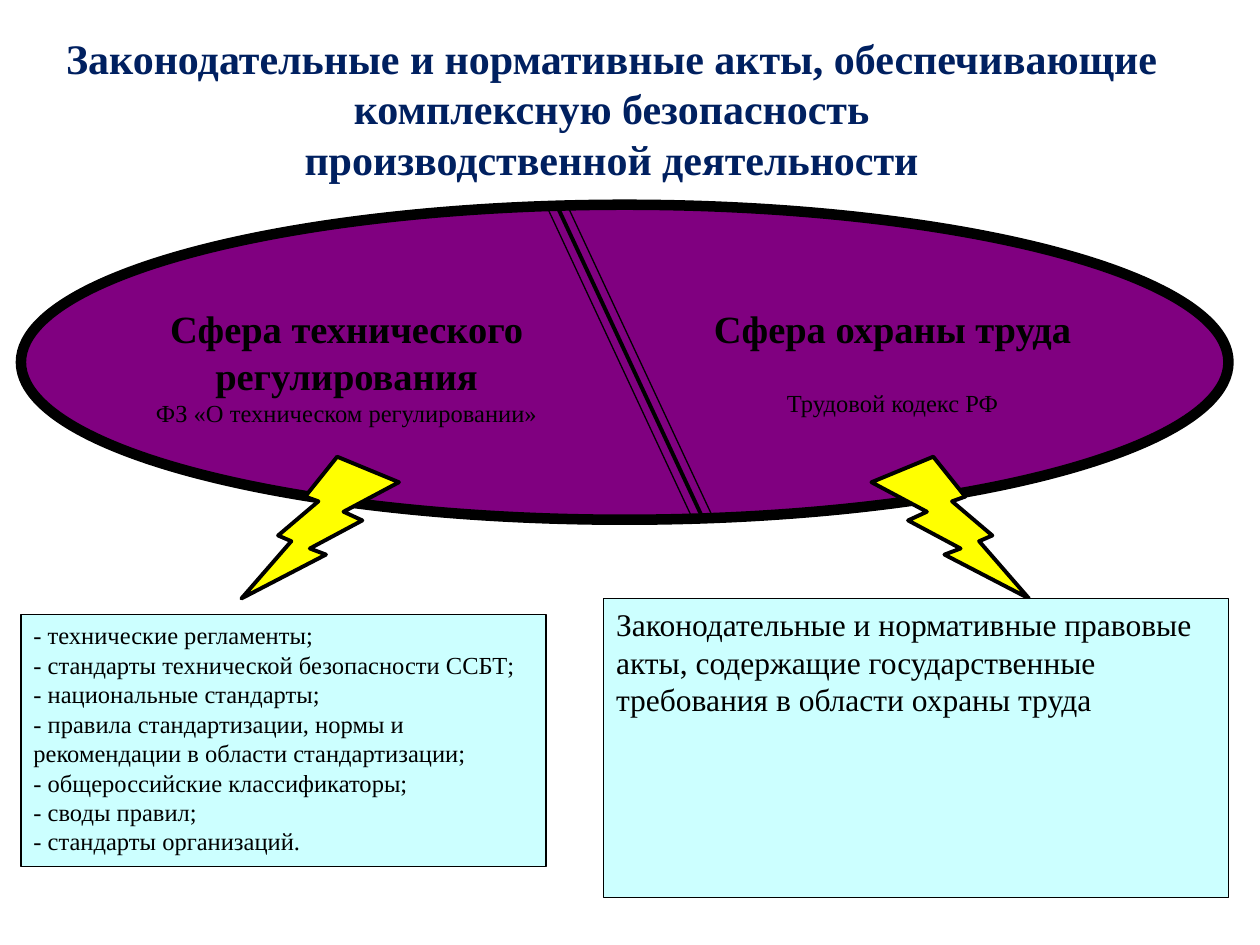
from lxml import etree
from pptx import Presentation
from pptx.dml.color import RGBColor
from pptx.enum.shapes import MSO_CONNECTOR, MSO_SHAPE
from pptx.enum.text import MSO_ANCHOR, MSO_AUTO_SIZE, PP_ALIGN
from pptx.oxml.ns import qn
from pptx.util import Pt

LEFT, CENTER = PP_ALIGN.LEFT, PP_ALIGN.CENTER
TOP, NO_FIT = MSO_ANCHOR.TOP, MSO_AUTO_SIZE.NONE
RECT, ELLIPSE, BOLT = MSO_SHAPE.RECTANGLE, MSO_SHAPE.OVAL, MSO_SHAPE.LIGHTNING_BOLT
STRAIGHT = MSO_CONNECTOR.STRAIGHT

FONT = "Times New Roman"
BLACK, NAVY, WHITE = "000000", "002060", "FFFFFF"
PURPLE, YELLOW, CYAN = "800080", "FFFF00", "CCFFFF"


def px(n):
    """120 px to the inch."""
    return n * 7620


def color(value):
    return RGBColor.from_string(value)


def add_text(tf, text, size=14, bold=False, fill=BLACK, align=LEFT, before=0):
    p = tf.paragraphs[0]
    if p.runs:
        p = tf.add_paragraph()
    p.alignment = align
    p.space_before = Pt(before)
    r = p.add_run()
    r.text = text
    r.font.name, r.font.size, r.font.bold = FONT, Pt(size), bold
    r.font.color.rgb = color(fill)


def setup_frame(tf):
    tf.word_wrap = True
    tf.auto_size = NO_FIT
    tf.vertical_anchor = TOP


def add_shape(s, kind, x, y, w, h, fill, line=0):
    sp = s.shapes.add_shape(kind, px(x), px(y), px(w), px(h))
    sp.shadow.inherit = False
    sp.fill.solid()
    sp.fill.fore_color.rgb = color(fill)
    if line:
        sp.line.color.rgb = color(BLACK)
        sp.line.width = Pt(line)
    else:
        sp.line.fill.background()
    setup_frame(sp.text_frame)
    return sp


def add_line(s, x1, y1, x2, y2, width):
    cxn = s.shapes.add_connector(STRAIGHT, px(x1), px(y1), px(x2), px(y2))
    cxn.line.color.rgb = color(BLACK)
    cxn.line.width = Pt(width)
    etree.SubElement(cxn._element.spPr, qn("a:effectLst"))


def add_title(s, x, y, w, h):
    sp = s.shapes.title
    sp.left, sp.top, sp.width, sp.height = px(x), px(y), px(w), px(h)
    sp.fill.solid()
    sp.fill.fore_color.rgb = color(WHITE)
    setup_frame(sp.text_frame)
    for text in ("Законодательные и нормативные акты, обеспечивающие комплексную безопасность",
                 "производственной деятельности"):
        add_text(sp.text_frame, text, size=24, bold=True, fill=NAVY, align=CENTER)


def add_spheres(s, x, y, w, h):
    """Ellipse with two headed halves and a slanted triple divider."""
    add_shape(s, ELLIPSE, x, y, w, h, PURPLE, line=6)
    halves = [
        (110, "Сфера технического регулирования", "ФЗ «О техническом регулировании»", 0),
        (630, "Сфера охраны труда", "Трудовой кодекс РФ", 21),
    ]
    for dx, heading, law, gap in halves:
        tf = add_shape(s, RECT, x + dx, y + 90, 400, 120, PURPLE).text_frame
        add_text(tf, heading, size=22, bold=True, align=CENTER)
        add_text(tf, law, align=CENTER, before=gap)
    for dx, width in ((500, 0.75), (510, 2.25), (520, 0.75)):
        add_line(s, x + dx, y, x + dx + 140, y + h, width)


def add_bolt(s, x, y, w, h, flip=False):
    sp = add_shape(s, BOLT, x, y, w, h, YELLOW, line=2.25)
    if flip:
        sp._element.spPr.xfrm.set("flipH", "1")


def add_box(s, x, y, w, h, lines, size):
    tf = add_shape(s, RECT, x, y, w, h, CYAN, line=0.75).text_frame
    for text in lines:
        add_text(tf, text, size=size)


def main():
    prs = Presentation()
    prs.slide_width, prs.slide_height = px(1200), px(900)
    s = prs.slides.add_slide(prs.slide_layouts[5])

    add_title(s, 15, 25, 1135, 148)
    add_spheres(s, 20, 195, 1150, 300)

    # Bolts from each half down to its box
    add_bolt(s, 230, 435, 150, 135, flip=True)
    add_bolt(s, 830, 435, 150, 135)

    # Documents of each sphere
    add_box(s, 20, 585, 500, 240, [
        "- технические регламенты;",
        "- стандарты технической безопасности ССБТ;",
        "- национальные стандарты;",
        "- правила стандартизации, нормы и рекомендации в области стандартизации;",
        "- общероссийские классификаторы;",
        "- своды правил;",
        "- стандарты организаций.",
    ], size=14)
    add_box(s, 575, 570, 595, 285, [
        "Законодательные и нормативные правовые акты, содержащие государственные "
        "требования в области охраны труда",
    ], size=18)

    prs.save("out.pptx")


if __name__ == "__main__":
    main()
